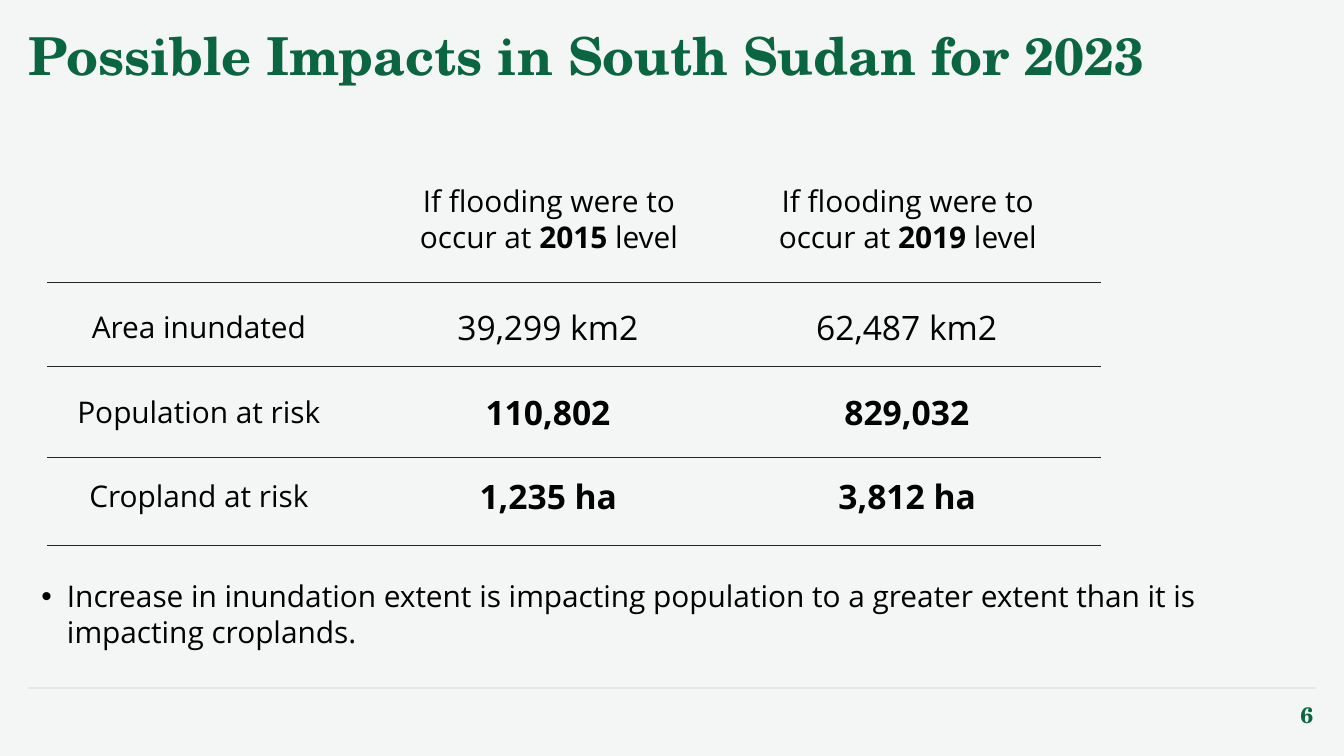
from lxml import etree
from pptx import Presentation
from pptx.dml.color import RGBColor
from pptx.enum.shapes import MSO_CONNECTOR
from pptx.enum.text import MSO_ANCHOR, MSO_AUTO_SIZE, PP_ALIGN
from pptx.oxml.ns import qn
from pptx.util import Inches, Pt

LEFT, CENTER, RIGHT = PP_ALIGN.LEFT, PP_ALIGN.CENTER, PP_ALIGN.RIGHT
TOP, MIDDLE = MSO_ANCHOR.TOP, MSO_ANCHOR.MIDDLE
STRAIGHT = MSO_CONNECTOR.STRAIGHT
FIT_SHAPE, NO_FIT = MSO_AUTO_SIZE.SHAPE_TO_FIT_TEXT, MSO_AUTO_SIZE.NONE

BACKGROUND = RGBColor(0xF4, 0xF5, 0xF5)
GREEN = RGBColor(0x09, 0x66, 0x40)
BLACK = RGBColor(0, 0, 0)
RULE = RGBColor(0x20, 0x26, 0x20)
PALE_RULE = RGBColor(0xE6, 0xE7, 0xE8)
HEADING_FONT, BODY_FONT = "TeX Gyre Schola", "Open Sans"

COLS, ROWS = 100, 56.25
CELL = Inches(0.1)

HEADERS = [("If flooding were to occur at ", year, " level") for year in ("2015", "2019")]
TABLE = [
    ("Area inundated", ("39,299 km2", "62,487 km2"), 21.2, 15.6, False),
    ("Population at risk", ("110,802", "829,032"), 22.6, 11.4, True),
    ("Cropland at risk", ("1,235 ha", "3,812 ha"), 20.8, 12.3, True),
]
ROW_MIDDLES = (11.25, 17.55, 23.8)
RULE_ROWS = (7.92, 14.18, 20.95, 27.5)


def grid(*cells):
    return [round(n * CELL) for n in cells]


def add_text(slide, box, runs, size, font=BODY_FONT, color=BLACK, align=LEFT,
             anchor=TOP, wrap=True, fit=FIT_SHAPE):
    tf = slide.shapes.add_textbox(*grid(*box)).text_frame
    tf.word_wrap = wrap
    tf.auto_size = fit
    tf.vertical_anchor = anchor
    p = tf.paragraphs[0]
    p.alignment = align
    for text, bold in runs:
        r = p.add_run()
        r.text = text
        r.font.name = font
        r.font.size = Pt(size)
        r.font.bold = bold
        r.font.color.rgb = color
    return tf


def add_rule(slide, x1, x2, y, color):
    line = slide.shapes.add_connector(STRAIGHT, *grid(x1, y, x2, y))
    line.line.color.rgb = color
    line.line.width = Pt(0.75)
    etree.SubElement(line._element.spPr, qn("a:effectLst"))


def add_title(slide, box):
    tf = add_text(slide, box, [("Possible Impacts in South Sudan for 2023", True)],
                  28, HEADING_FONT, GREEN, fit=NO_FIT)
    tf.margin_left = 0
    tf.margin_right = tf.margin_top = tf.margin_bottom = CELL


def add_impact_table(slide, box):
    x, y, w, h = box
    label_mid, column_w = x + 11.3, 26.7
    column_lefts = [x + 24 + i * column_w for i in range(len(HEADERS))]
    for left, (before, year, after) in zip(column_lefts, HEADERS):
        add_text(slide, (left, y, column_w, 6.4),
                 [(before, False), (year, True), (after, False)], 16, align=CENTER)
    for middle, (label, values, label_w, value_w, bold) in zip(ROW_MIDDLES, TABLE):
        add_text(slide, (label_mid - label_w / 2, y + middle - 1.85, label_w, 3.7),
                 [(label, False)], 16, align=CENTER)
        for left, value in zip(column_lefts, values):
            add_text(slide, (left + (column_w - value_w) / 2, y + middle - 2, value_w, 4),
                     [(value, bold)], 18, wrap=False)
    for row in RULE_ROWS:
        add_rule(slide, x, x + w, y + row, RULE)


def add_takeaway(slide, box):
    text = ("Increase in inundation extent is impacting population to a greater "
            "extent than it is impacting croplands.")
    p = add_text(slide, box, [(text, False)], 16).paragraphs[0]
    pPr = p._p.get_or_add_pPr()
    pPr.set("marL", str(Inches(0.19)))
    pPr.set("indent", str(-Inches(0.19)))
    color = etree.SubElement(pPr, qn("a:buClr"))
    etree.SubElement(color, qn("a:srgbClr"), val=str(BLACK))
    etree.SubElement(pPr, qn("a:buFont"), typeface="Arial")
    etree.SubElement(pPr, qn("a:buChar"), char="•")


def add_footer(slide, box):
    x, y, w, h = box
    add_rule(slide, x, x + w, y, PALE_RULE)
    tf = add_text(slide, (x + w - 5.2, y - 0.2, 6, h), [("6", True)], 12,
                  HEADING_FONT, GREEN, RIGHT, MIDDLE, fit=NO_FIT)
    tf.margin_top = tf.margin_bottom = tf.margin_left = tf.margin_right = CELL


def main():
    prs = Presentation()
    prs.slide_width, prs.slide_height = grid(COLS, ROWS)
    slide = prs.slides.add_slide(prs.slide_layouts[6])
    slide.background.fill.solid()
    slide.background.fill.fore_color.rgb = BACKGROUND
    add_footer(slide, (2.1, 51.2, COLS - 4.2, 4.3))
    add_title(slide, (2.1, 0.7, 89.9, 6.3))
    add_impact_table(slide, (3.5, 13.1, 78.45, 27.5))
    add_takeaway(slide, (2.1, 42.52, 94.8, 6.4))
    prs.save("out.pptx")


if __name__ == "__main__":
    main()
